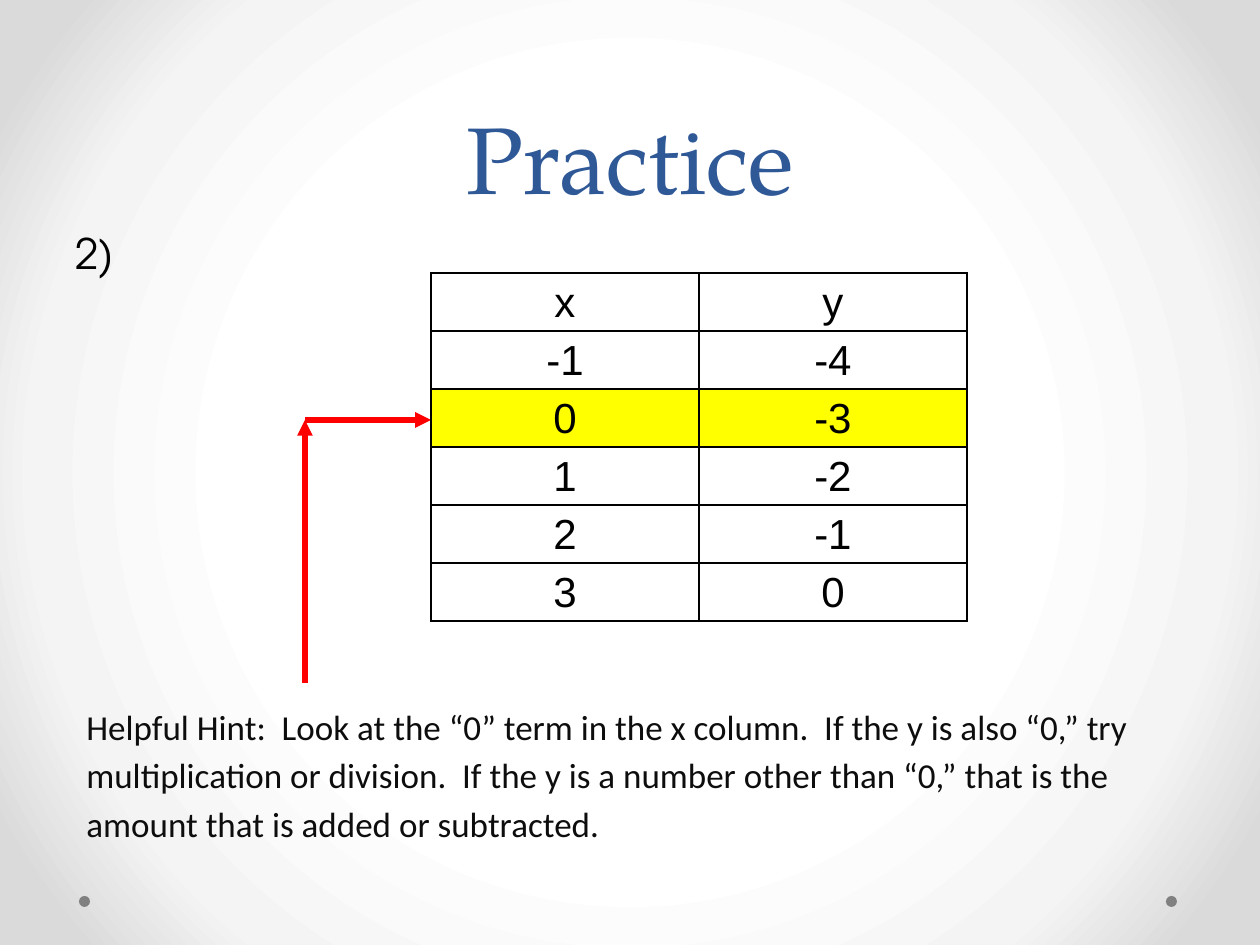
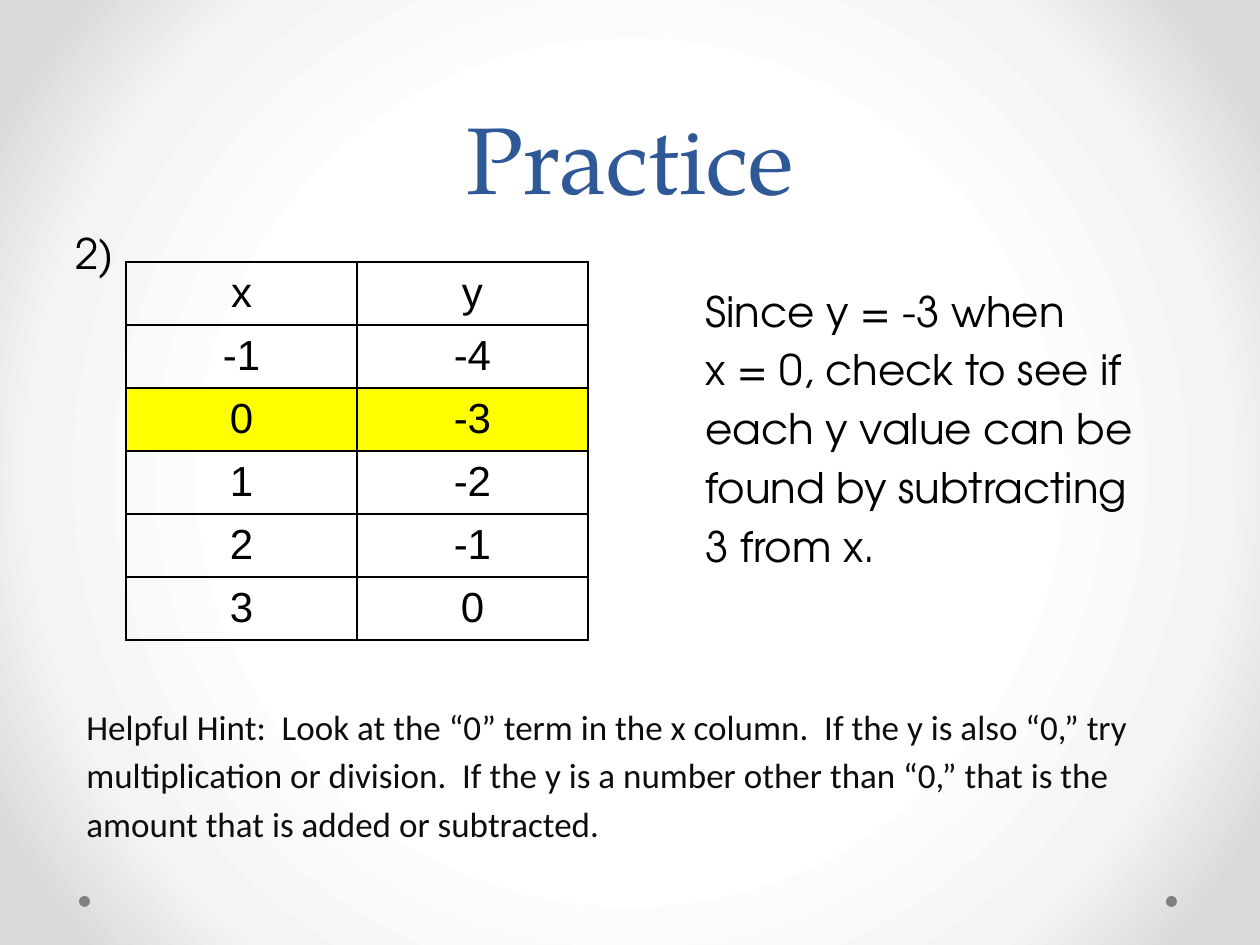
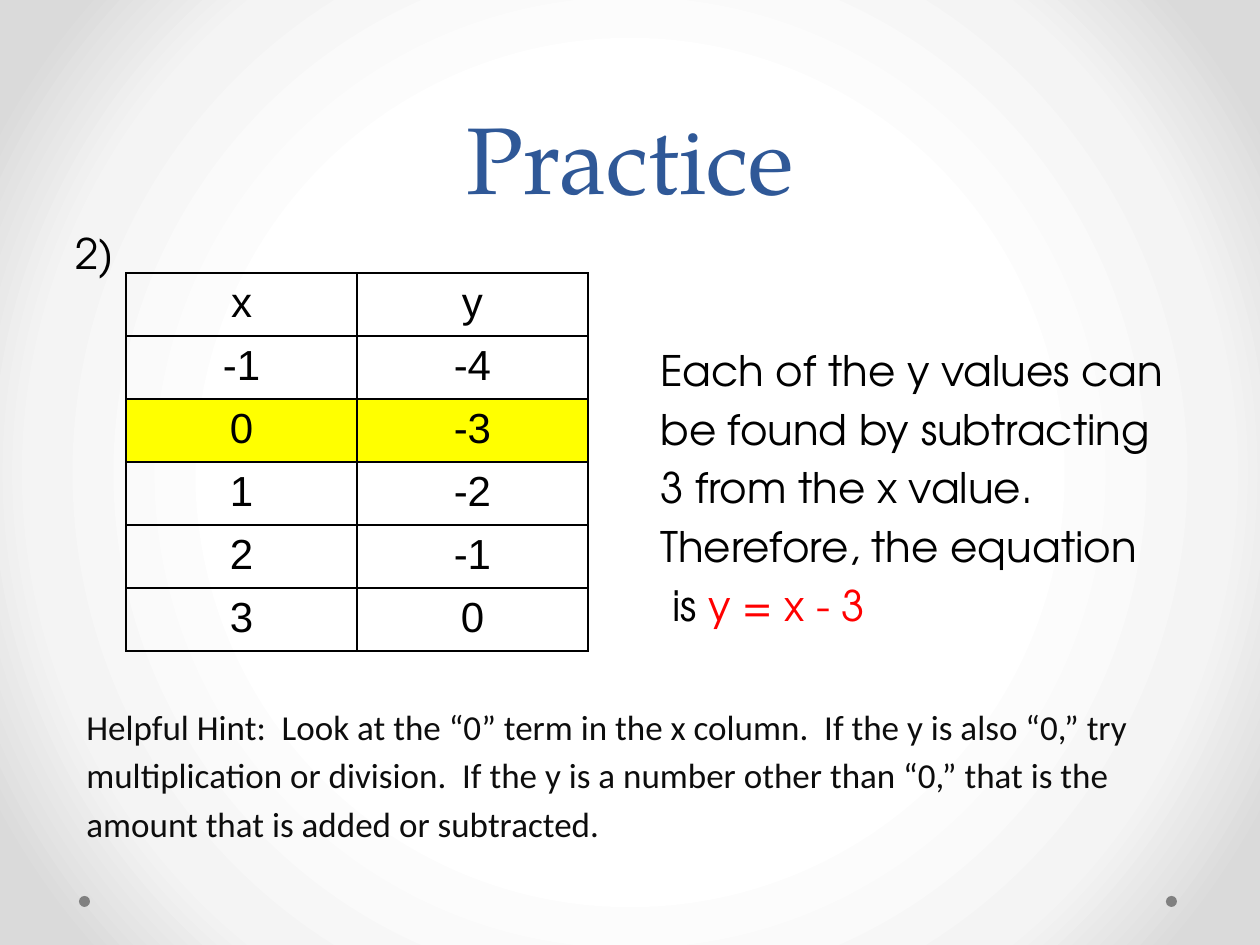
import dataclasses

import pptx
import pptx.dml.color
import pptx.enum.shapes
import pptx.enum.text
import pptx.oxml.ns
import pptx.util
from lxml import etree

PX = 914400 / 126
ALIGN = pptx.enum.text.PP_ALIGN
ANCHOR = pptx.enum.text.MSO_ANCHOR
SLIDE_BOX = (0, 0, 1260, 945)
BLANK_LAYOUT = 6

VALUES = [("x", "y"), ("-1", "-4"), ("0", "-3"), ("1", "-2"), ("2", "-1"), ("3", "0")]
ZERO_ROW = 2
HINT = ("Helpful Hint:  Look at the “0” term in the x column.  If the y is also “0,” try "
        "multiplication or division.  If the y is a number other than “0,” that is the "
        "amount that is added or subtracted.")
CHECK_LINES = [["Since y = -3 when"], ["x = 0, check to see if"], ["each y value can be"],
               ["found by subtracting"], ["3 from x."]]
ANSWER_LINES = [["Each of the y values can"], ["be found by subtracting"],
                ["3 from the x value."], ["Therefore, the equation"],
                [" is ", "y = x - 3"]]


@dataclasses.dataclass(frozen=True)
class Style:
    font: str
    size: int
    color: str


@dataclasses.dataclass(frozen=True)
class Theme:
    title: Style = Style("TeX Gyre Pagella", 54, "2F5897")
    body: Style = Style("TeX Gyre Adventor", 24, "000000")
    hint: Style = Style("Calibri", 20, "0D0D0D")
    cell: Style = Style("Arial", 24, "000000")
    accent: str = "FF0000"
    highlight: str = "FFFF00"
    border: str = "000000"
    dot: str = "808080"
    glow: tuple = ((50, "FFFFFF"), (76, "F4F4F4"), (92, "DADADA"))


THEME = Theme()


def px(*lengths):
    return [pptx.util.Emu(round(length * PX)) for length in lengths]


def rgb(color):
    return pptx.dml.color.RGBColor.from_string(color)


def add_xml(parent, tag, **attributes):
    return etree.SubElement(parent, pptx.oxml.ns.qn(tag), attributes)


def style_run(run, style, color=None):
    run.font.name = style.font
    run.font.size = pptx.util.Pt(style.size)
    run.font.color.rgb = rgb(color or style.color)


def add_text(slide, box, lines, style, anchor=ANCHOR.TOP, **spacing):
    """Writes one paragraph per line; a second run in a line takes the accent colour."""
    frame = slide.shapes.add_textbox(*px(*box)).text_frame
    frame.word_wrap = True
    frame.vertical_anchor = anchor
    for index, parts in enumerate(lines):
        paragraph = frame.paragraphs[0] if index == 0 else frame.add_paragraph()
        for name, value in spacing.items():
            setattr(paragraph, name, value)
        for part, color in zip(parts, (style.color, THEME.accent)):
            run = paragraph.add_run()
            run.text = part
            style_run(run, style, color)


def add_body_text(slide, box, lines):
    add_text(slide, box, lines, THEME.body, space_before=pptx.util.Pt(4.8))


def set_background(master):
    """Gives every slide the round glow, white in the middle and grey at the corners."""
    master.background.fill.gradient()
    glow = master.element.find(".//" + pptx.oxml.ns.qn("a:gradFill"))
    for child in list(glow):
        glow.remove(child)
    stops = add_xml(glow, "a:gsLst")
    for position, color in THEME.glow:
        stop = add_xml(stops, "a:gs", pos=str(position * 1000))
        add_xml(stop, "a:srgbClr", val=color)
    circle = add_xml(glow, "a:path", path="circle")
    add_xml(circle, "a:fillToRect", l="50000", t="50000", r="50000", b="50000")


def add_dots(slide, box):
    left, top, width, height = box
    size = 11
    for x in (left + 79, left + width - 94):
        dot = slide.shapes.add_shape(pptx.enum.shapes.MSO_SHAPE.OVAL,
                                     *px(x, top + height - 49, size, size))
        dot.shadow.inherit = False
        dot.fill.solid()
        dot.fill.fore_color.rgb = rgb(THEME.dot)
        dot.line.fill.background()


def add_practice_frame(slide, box):
    """Places the dots, title, problem number and hint that all slides share."""
    left, top, width, height = box
    margin = 63
    add_dots(slide, box)
    add_text(slide, (left + margin, top, width - 2 * margin, 220), [["Practice"]],
             THEME.title, ANCHOR.BOTTOM, alignment=ALIGN.CENTER,
             line_spacing=pptx.util.Pt(58))
    add_body_text(slide, (left + margin, top + 221, 126, 63), [["2)"]])
    add_text(slide, (left + 74, top + 693, 1081, 159), [[HINT]], THEME.hint,
             line_spacing=1.15, space_after=pptx.util.Pt(10))


def add_borders(cell):
    properties = cell._tc.get_or_add_tcPr()
    for index, side in enumerate(("a:lnL", "a:lnR", "a:lnT", "a:lnB")):
        border = add_xml(properties, side, w="12700")
        add_xml(add_xml(border, "a:solidFill"), "a:srgbClr", val=THEME.border)
        properties.insert(index, border)


def fill_cell(cell, value, highlighted):
    cell.margin_left = cell.margin_right = pptx.util.Inches(0.07)
    cell.margin_top = cell.margin_bottom = 0
    if highlighted:
        cell.fill.solid()
        cell.fill.fore_color.rgb = rgb(THEME.highlight)
    else:
        cell.fill.background()
    add_borders(cell)
    paragraph = cell.text_frame.paragraphs[0]
    paragraph.text = value
    paragraph.alignment = ALIGN.CENTER
    paragraph.line_spacing = 1.15
    style_run(paragraph.runs[0], THEME.cell)


def add_value_table(slide, box):
    table = slide.shapes.add_table(len(VALUES), 2, *px(*box)).table
    table.first_row = table.horz_banding = False
    for row_index, values in enumerate(VALUES):
        for column_index, value in enumerate(values):
            fill_cell(table.cell(row_index, column_index), value, row_index == ZERO_ROW)


def add_arrow(slide, start, end):
    arrow = slide.shapes.add_connector(pptx.enum.shapes.MSO_CONNECTOR.STRAIGHT,
                                       *px(*start, *end))
    arrow.line.color.rgb = rgb(THEME.accent)
    arrow.line.width = pptx.util.Pt(3)
    add_xml(arrow.line._get_or_add_ln(), "a:tailEnd", type="triangle")
    add_xml(arrow._element.spPr, "a:effectLst")


def add_hint_arrows(slide, box):
    """Leads up from the hint and then right to the row where x is 0."""
    left, top, width, height = box
    corner = (left, top)
    add_arrow(slide, corner, (left + width, top))
    add_arrow(slide, (left, top + height), corner)


def main():
    presentation = pptx.Presentation()
    presentation.slide_width, presentation.slide_height = px(*SLIDE_BOX[2:])
    set_background(presentation.slide_master)
    layout = presentation.slide_layouts[BLANK_LAYOUT]
    hint_slide, check_slide, answer_slide = [presentation.slides.add_slide(layout)
                                             for _ in range(3)]
    for slide in (hint_slide, check_slide, answer_slide):
        add_practice_frame(slide, SLIDE_BOX)

    add_hint_arrows(hint_slide, (305, 420, 126, 263))
    add_value_table(hint_slide, (431, 273, 536, 348))

    add_body_text(check_slide, (693, 279, 504, 308), CHECK_LINES)
    add_value_table(check_slide, (126, 262, 462, 378))

    add_body_text(answer_slide, (648, 338, 549, 308), ANSWER_LINES)
    add_value_table(answer_slide, (126, 273, 462, 378))

    presentation.save("out.pptx")


if __name__ == "__main__":
    main()
